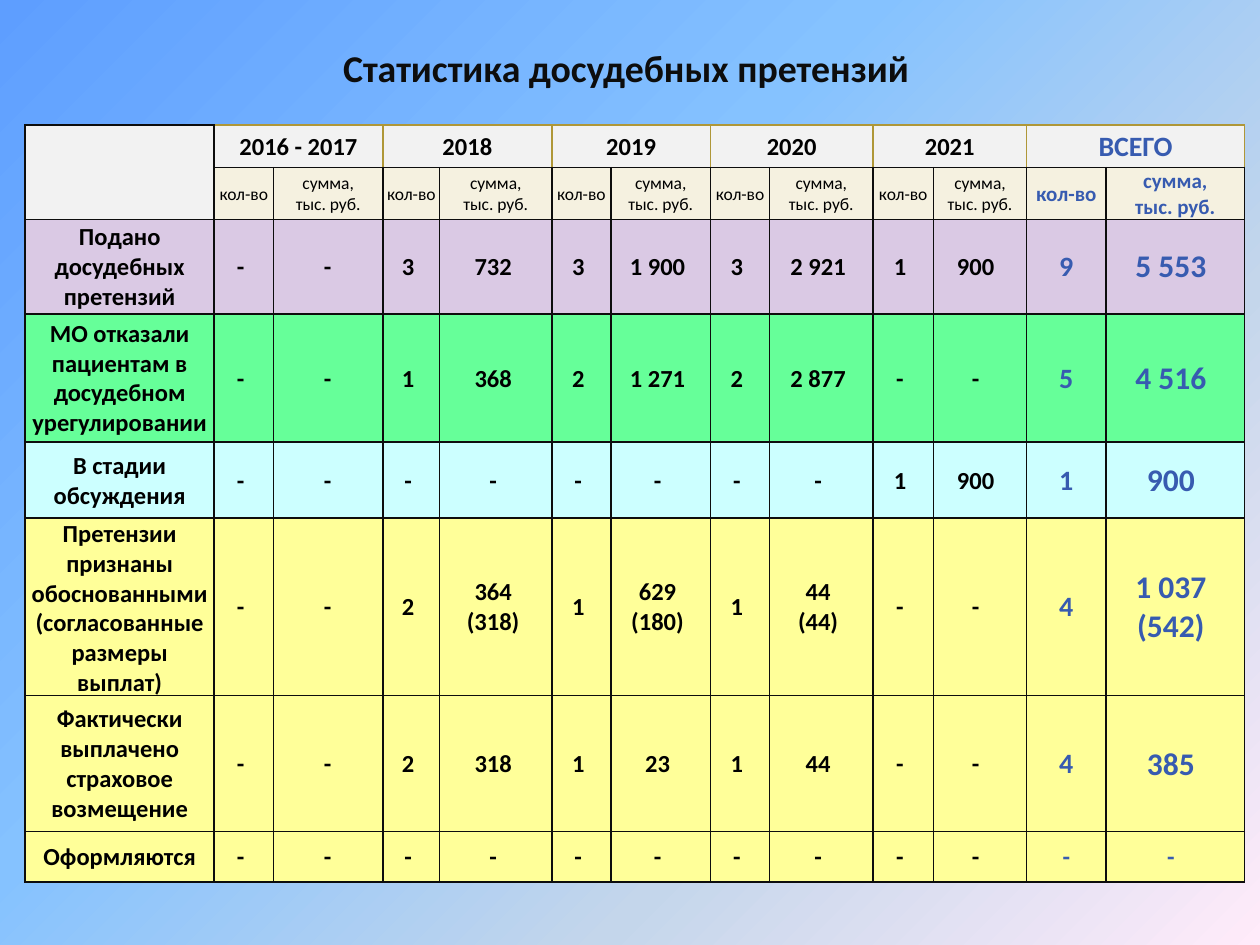
"""Build a slide with a table of pre-trial claim statistics by year."""
from lxml import etree
from pptx import Presentation
from pptx.dml.color import RGBColor
from pptx.enum.text import MSO_ANCHOR, PP_ALIGN
from pptx.oxml.ns import qn
from pptx.util import Inches, Pt

MIDDLE = MSO_ANCHOR.MIDDLE
CENTER = PP_ALIGN.CENTER

TITLE = "Статистика досудебных претензий"
PERIODS = ["2016 - 2017", "2018", "2019", "2020", "2021", "ВСЕГО"]
MEASURES = ["кол-во", "сумма,\nтыс. руб."]
CLAIMS = [
    ("Подано\nдосудебных\nпретензий", "lilac",
     ["-", "-", "3", "732", "3", "1 900", "3", "2 921", "1", "900", "9", "5 553"]),
    ("МО отказали пациентам в досудебном урегулировании", "green",
     ["-", "-", "1", "368", "2", "1 271", "2", "2 877", "-", "-", "5", "4 516"]),
    ("В стадии обсуждения", "cyan",
     ["-", "-", "-", "-", "-", "-", "-", "-", "1", "900", "1", "900"]),
    ("Претензии признаны обоснованными (согласованные размеры выплат)", "yellow",
     ["-", "-", "2", "364\n(318)", "1", "629\n(180)", "1", "44\n(44)", "-", "-",
      "4", "1 037\n(542)"]),
    ("Фактически выплачено страховое возмещение", "yellow",
     ["-", "-", "2", "318", "1", "23", "1", "44", "-", "-", "4", "385"]),
    ("Оформляются", "yellow", ["-"] * 12),
]

THEME = {
    "font": "Calibri",
    "ink": "000000", "title": "0D0D0D", "total": "375BB0",
    "border": "0D0D0D", "gold": "AF9738",
    "header": "F2F2F2", "subheader": "F5F1E0",
    "lilac": "DAC9E4", "green": "66FF99", "cyan": "CCFFFF", "yellow": "FFFF99",
    "background": [(0, "5E9EFF"), (40, "85C2FF"), (70, "C4D6EB"), (100, "FFEBFA")],
    "title_size": 21.6, "body_size": 14, "measure_size": 10,
    "total_measure_size": 12, "total_count_size": 16, "total_sum_size": 18,
}
COLUMN_WIDTHS = [1.5, 0.47, 0.87, 0.45, 0.89, 0.47, 0.79, 0.47, 0.82, 0.48, 0.74, 0.63, 1.1]
ROW_HEIGHTS = [0.34, 0.41, 0.75, 1.02, 0.6, 1.31, 1.08, 0.4]
VALUE_RIGHT_MARGINS = [0.06, 0.02, 0.06, 0.05, 0.06, 0.06, 0.06, 0.06, 0.06, 0.08, 0.01, 0.08]
INSET = 0.01
FIRST_TOTAL_COLUMN = 11


def write(frame, text, size, color="ink", bold=True):
    """Put centred paragraphs of one type style into a text frame."""
    frame.text = text
    style = {"name": THEME["font"], "size": Pt(size), "bold": bold}
    for paragraph in frame.paragraphs:
        paragraph.alignment = CENTER
        for run in paragraph.runs:
            for attribute, value in style.items():
                setattr(run.font, attribute, value)
            run.font.color.rgb = RGBColor.from_string(THEME[color])


def solid(parent, color):
    """Append a solid fill to an XML element."""
    fill = etree.SubElement(parent, qn("a:solidFill"))
    etree.SubElement(fill, qn("a:srgbClr"), val=color)


def decorate(cell, fill, edges=None, right_margin=INSET):
    """Give a cell its borders, fill, insets and anchor."""
    properties = cell._tc.get_or_add_tcPr()
    for side in "LRTB":
        line = etree.SubElement(properties, qn(f"a:ln{side}"), w=str(Pt(1)))
        solid(line, THEME[(edges or {}).get(side, "border")])
    cell.fill.solid()
    cell.fill.fore_color.rgb = RGBColor.from_string(THEME[fill])
    layout = {"margin_left": Inches(INSET), "margin_right": Inches(right_margin),
              "margin_top": Inches(INSET), "margin_bottom": 0, "vertical_anchor": MIDDLE}
    for attribute, value in layout.items():
        setattr(cell, attribute, value)


def paint_background(slide):
    """Fill the background with the diagonal gradient."""
    fill = slide.background.fill
    fill.gradient()
    fill.gradient_angle = 315
    stops = slide.element.find(f".//{qn('a:gsLst')}")
    for stop in list(stops):
        stops.remove(stop)
    for position, color in THEME["background"]:
        stop = etree.SubElement(stops, qn("a:gs"), pos=str(position * 1000))
        etree.SubElement(stop, qn("a:srgbClr"), val=color)


def add_title(slide):
    """Add the heading."""
    heading = slide.shapes.add_textbox(Inches(0), Inches(0.21), Inches(9.94), Inches(0.65))
    heading.text_frame.word_wrap = True
    heading.text_frame.vertical_anchor = MIDDLE
    write(heading.text_frame, TITLE, THEME["title_size"], "title")


def fill_headers(table):
    """Write the periods and the two measures under each."""
    for row in (0, 1):
        decorate(table.cell(row, 0), "header")
    table.cell(0, 0).merge(table.cell(1, 0))
    for index, period in enumerate(PERIODS):
        column = 1 + 2 * index
        is_total = column == FIRST_TOTAL_COLUMN
        edges = {"L": "gold" if index else "border", "T": "gold", "R": "gold"}
        for offset, measure in enumerate(MEASURES):
            decorate(table.cell(0, column + offset), "header", edges)
            cell = table.cell(1, column + offset)
            decorate(cell, "subheader")
            size = THEME["total_measure_size" if is_total else "measure_size"]
            write(cell.text_frame, measure, size, "total" if is_total else "ink", is_total)
        table.cell(0, column).merge(table.cell(0, column + 1))
        size = THEME["total_count_size" if is_total else "body_size"]
        write(table.cell(0, column).text_frame, period, size, "total" if is_total else "ink")


def fill_claims(table):
    """Write one row for each claim status."""
    total_sizes = [THEME["total_count_size"], THEME["total_sum_size"]]
    for row, (status, fill, values) in enumerate(CLAIMS, start=2):
        decorate(table.cell(row, 0), fill)
        write(table.cell(row, 0).text_frame, status, THEME["body_size"])
        for column, (value, margin) in enumerate(zip(values, VALUE_RIGHT_MARGINS), start=1):
            is_total = column >= FIRST_TOTAL_COLUMN
            size = THEME["body_size"]
            if is_total and value != "-":
                size = total_sizes[column - FIRST_TOTAL_COLUMN]
            cell = table.cell(row, column)
            decorate(cell, fill, right_margin=margin)
            write(cell.text_frame, value, size, "total" if is_total else "ink")


def main():
    """Assemble and save the slide."""
    deck = Presentation()
    deck.slide_width, deck.slide_height = Inches(10), Inches(7.5)
    slide = deck.slides.add_slide(deck.slide_layouts[6])
    paint_background(slide)
    add_title(slide)
    table = slide.shapes.add_table(
        len(ROW_HEIGHTS), len(COLUMN_WIDTHS), Inches(0.2), Inches(0.99),
        Inches(sum(COLUMN_WIDTHS)), Inches(sum(ROW_HEIGHTS))).table
    table.first_row = table.horz_banding = False
    for column, width in zip(table.columns, COLUMN_WIDTHS):
        column.width = Inches(width)
    for row, height in zip(table.rows, ROW_HEIGHTS):
        row.height = Inches(height)
    fill_headers(table)
    fill_claims(table)
    deck.save("out.pptx")


if __name__ == "__main__":
    main()
